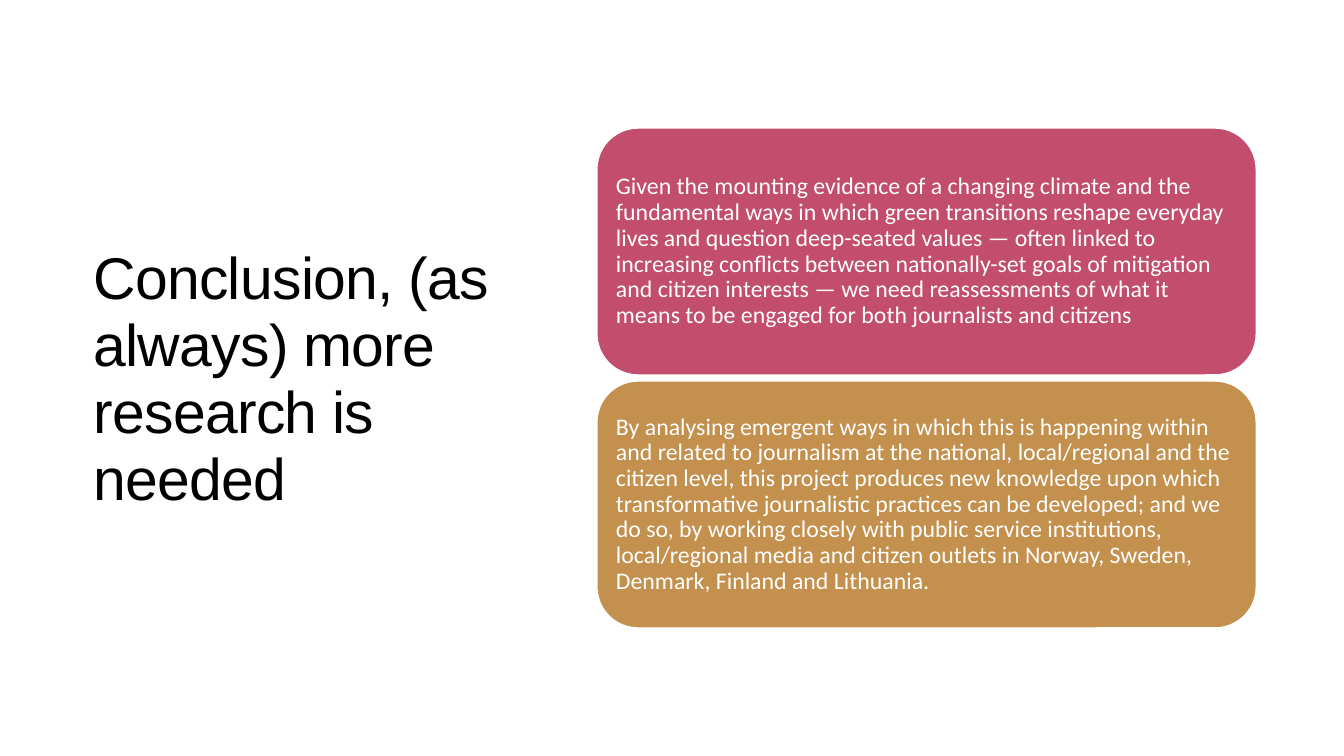
from pptx import Presentation
from pptx.dml.color import RGBColor
from pptx.enum.shapes import MSO_SHAPE
from pptx.enum.text import MSO_ANCHOR, PP_ALIGN
from pptx.util import Inches, Pt

ROUNDED = MSO_SHAPE.ROUNDED_RECTANGLE
MIDDLE = MSO_ANCHOR.MIDDLE
LEFT = PP_ALIGN.LEFT

COLOURS = {"black": "000000", "white": "FFFFFF", "rose": "C34D6C", "ochre": "C3904D"}
TITLE_STYLE = {"name": "Arial", "size": Pt(42)}
CARD_STYLE = {"name": "Calibri", "size": Pt(17)}

TITLE = "Conclusion, (as always) more research is needed"
CARDS = [
    ("rose",
     "Given the mounting evidence of a changing climate and the fundamental ways in "
     "which green transitions reshape everyday lives and question deep-seated values "
     "— often linked to increasing conflicts between nationally-set goals of "
     "mitigation and citizen interests — we need reassessments of what it means to "
     "be engaged for both journalists and citizens"),
    ("ochre",
     "By analysing emergent ways in which this is happening within and related to "
     "journalism at the national, local/regional and the citizen level, this project "
     "produces new knowledge upon which transformative journalistic practices can be "
     "developed; and we do so, by working closely with public service institutions, "
     "local/regional media and citizen outlets in Norway, Sweden, Denmark, Finland "
     "and Lithuania."),
]
CARD_TOP, CARD_HEIGHT, CARD_GAP = 1.27, 2.45, 0.06


def colour(name):
    return RGBColor.from_string(COLOURS[name])


class SlideBuilder:
    """Holds the current slide and draws its elements in one style."""

    def __init__(self, slide):
        self.slide = slide

    def fill_text(self, box, text, style, ink, line_spacing, inset):
        """Fill a box with one left-aligned, vertically centred paragraph."""
        frame = box.text_frame
        frame_format = {"word_wrap": True, "vertical_anchor": MIDDLE}
        for side in ("left", "right", "top", "bottom"):
            frame_format[f"margin_{side}"] = Inches(inset)
        for key, value in frame_format.items():
            setattr(frame, key, value)
        para = frame.paragraphs[0]
        para.alignment = LEFT
        para.line_spacing = line_spacing
        span = para.add_run()
        span.text = text
        for key, value in style.items():
            setattr(span.font, key, value)
        span.font.color.rgb = colour(ink)
        return span

    def title(self, text, left, top, width, height):
        box = self.slide.shapes.add_textbox(
            Inches(left), Inches(top), Inches(width), Inches(height))
        span = self.fill_text(box, text, TITLE_STYLE, "black", 0.95, 0.1)
        # Letter spacing in hundredths of a point
        span.font._element.set("spc", "-50")

    def card(self, text, fill, left, top, width, height):
        box = self.slide.shapes.add_shape(
            ROUNDED, Inches(left), Inches(top), Inches(width), Inches(height))
        box.shadow.inherit = False
        box.fill.solid()
        box.fill.fore_color.rgb = colour(fill)
        box.line.color.rgb = colour("white")
        box.line.width = Pt(1)
        self.fill_text(box, text, CARD_STYLE, "white", 0.9, 0.07)


def main():
    deck = Presentation()
    deck.slide_width, deck.slide_height = Inches(13.33), Inches(7.5)
    page = SlideBuilder(deck.slides.add_slide(deck.slide_layouts[6]))
    page.title(TITLE, 0.83, 0.85, 4.27, 5.84)
    for index, (fill, text) in enumerate(CARDS):
        top = CARD_TOP + index * (CARD_HEIGHT + CARD_GAP)
        page.card(text, fill, 5.92, top, 6.54, CARD_HEIGHT)
    deck.save("out.pptx")


if __name__ == "__main__":
    main()
